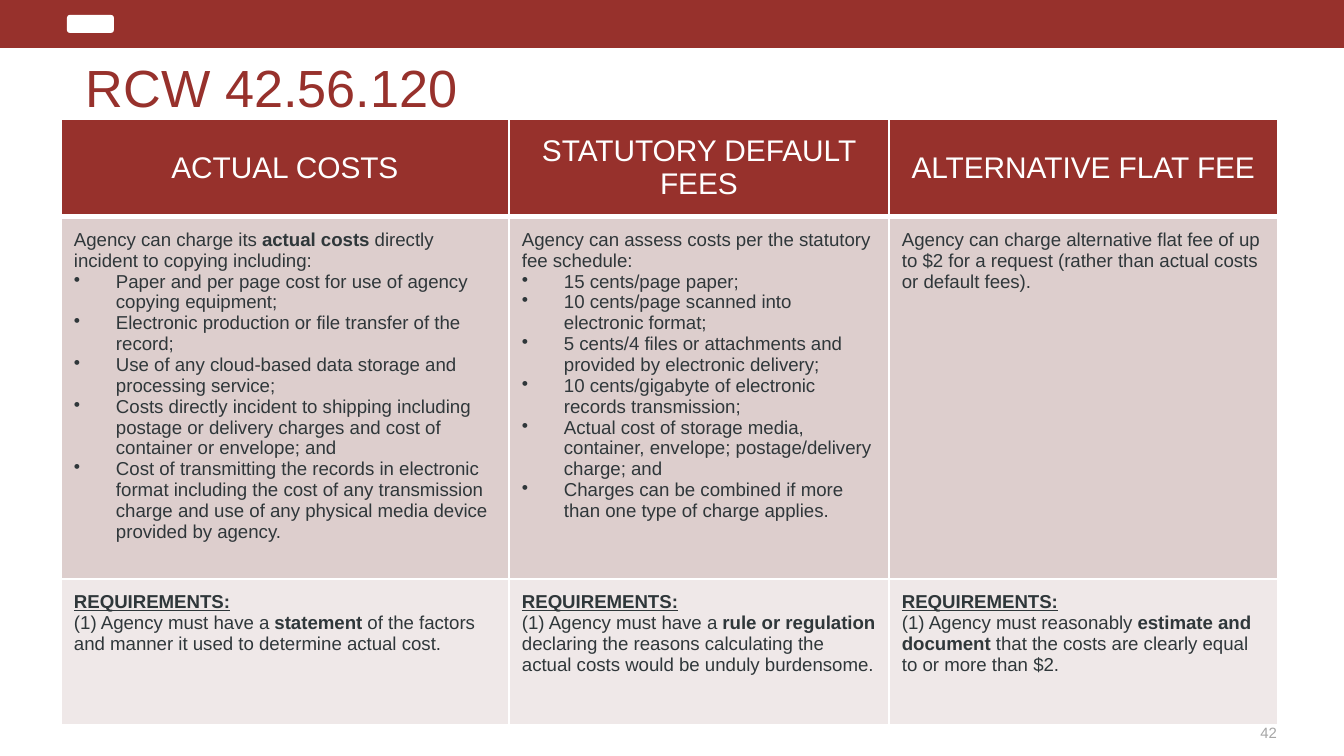
"""Build a slide that compares three ways to charge for public records."""
from lxml.etree import SubElement
from pptx import Presentation
from pptx.dml.color import RGBColor
from pptx.enum.shapes import MSO_SHAPE
from pptx.enum.text import MSO_ANCHOR, PP_ALIGN
from pptx.oxml.ns import qn
from pptx.util import Pt

SCALE = 9144000 / 1344
HUE = {"brand": "97312C", "white": "FFFFFF", "ink": "2F373A", "gray": "A6A6A6",
       "rose": "DDCECD", "pale": "EFE8E8"}
NEED = "REQUIREMENTS:"
HEADS = ["ACTUAL COSTS", "STATUTORY DEFAULT FEES", "ALTERNATIVE FLAT FEE"]
COSTS = [
    ["Agency can charge its *actual costs* directly incident to copying including:",
     "• Paper and per page cost for use of agency copying equipment;",
     "• Electronic production or file transfer of the record;",
     "• Use of any cloud-based data storage and processing service;",
     "• Costs directly incident to shipping including postage or delivery charges "
     "and cost of container or envelope; and",
     "• Cost of transmitting the records in electronic format including the cost of any "
     "transmission charge and use of any physical media device provided by agency."],
    ["Agency can assess costs per the statutory fee schedule:",
     "• 15 cents/page paper;",
     "• 10 cents/page scanned into electronic format;",
     "• 5 cents/4 files or attachments and provided by electronic delivery;",
     "• 10 cents/gigabyte of electronic records transmission;",
     "• Actual cost of storage media, container, envelope; postage/delivery charge; and",
     "• Charges can be combined if more than one type of charge applies."],
    ["Agency can charge alternative flat fee of up to $2 for a request "
     "(rather than actual costs or default fees)."],
]
RULES = [
    "(1) Agency must have a *statement* of the factors and manner it used to "
    "determine actual cost.",
    "(1) Agency must have a *rule or regulation* declaring the reasons calculating "
    "the actual costs would be unduly burdensome.",
    "(1) Agency must reasonably *estimate and document* that the costs are clearly "
    "equal to or more than $2.",
]
BODY = {"size": 10, "hue": "ink", "align": PP_ALIGN.LEFT, "anchor": MSO_ANCHOR.TOP}
ROWS = [
    {"high": 92, "fill": "brand", "cells": [[head] for head in HEADS],
     "look": {"size": 16, "hue": "white", "align": PP_ALIGN.CENTER,
              "anchor": MSO_ANCHOR.MIDDLE}},
    {"high": 340, "fill": "rose", "cells": COSTS, "look": BODY},
    {"high": 146, "fill": "pale", "cells": [[NEED, rule] for rule in RULES], "look": BODY},
]
WIDTHS = [448, 380, 389]
BARS = [
    {"shape": MSO_SHAPE.RECTANGLE, "box": (0, 0, 1344, 48), "hue": "brand"},
    {"shape": MSO_SHAPE.ROUNDED_RECTANGLE, "box": (67, 15, 47, 18), "hue": "white"},
]
LABELS = [
    {"text": "42", "box": (1199, 712, 78, 41), "pad": 7,
     "look": {"size": 8, "hue": "gray", "align": PP_ALIGN.RIGHT,
              "anchor": MSO_ANCHOR.MIDDLE}},
    {"text": "RCW 42.56.120", "box": (86, 23, 1210, 95), "pad": 0,
     "look": {"size": 28, "hue": "brand", "align": PP_ALIGN.LEFT,
              "anchor": MSO_ANCHOR.BOTTOM}},
]


def px(num):
    """Turn pixels into EMU."""
    return round(num * SCALE)


def put(item, **vals):
    """Set each named value on an item."""
    for name, val in vals.items():
        setattr(item, name, val)


def paint(item, hue):
    """Give an item a solid fill."""
    item.fill.solid()
    item.fill.fore_color.rgb = RGBColor.from_string(HUE[hue])


def write(frame, lines, look):
    """Write lines, with bold parts between stars."""
    for num, line in enumerate(lines):
        para = frame.add_paragraph() if num else frame.paragraphs[0]
        para.alignment = look["align"]
        if line.startswith("• "):
            props = para._p.get_or_add_pPr()
            props.set("marL", str(px(42)))
            props.set("indent", str(px(-42)))
            SubElement(props, qn("a:buChar"), char="•")
            line = line[2:]
        for part, text in enumerate(line.split("*")):
            if text:
                run = para.add_run()
                run.text = text
                put(run.font, name="Arial", size=Pt(look["size"]),
                    bold=part % 2 == 1 or line == NEED, underline=line == NEED)
                run.font.color.rgb = RGBColor.from_string(HUE[look["hue"]])


def edge(cell, sides):
    """Draw white cell borders of the given widths."""
    props = cell._tc.get_or_add_tcPr()
    for side, wide in sides.items():
        line = SubElement(props, qn(f"a:ln{side}"), w=str(Pt(wide)))
        fill = SubElement(line, qn("a:solidFill"))
        SubElement(fill, qn("a:srgbClr"), val=HUE["white"])


def main():
    """Build and save the deck."""
    deck = Presentation()
    put(deck, slide_width=px(1344), slide_height=px(756))
    shapes = deck.slides.add_slide(deck.slide_layouts[6]).shapes

    for bar in BARS:
        shape = shapes.add_shape(bar["shape"], *map(px, bar["box"]))
        shape.shadow.inherit = False
        shape.line.fill.background()
        paint(shape, bar["hue"])

    for label in LABELS:
        frame = shapes.add_textbox(*map(px, label["box"])).text_frame
        put(frame, word_wrap=True, vertical_anchor=label["look"]["anchor"],
            margin_left=0, margin_right=0,
            margin_top=px(label["pad"]), margin_bottom=px(label["pad"]))
        write(frame, [label["text"]], label["look"])

    high = sum(row["high"] for row in ROWS)
    table = shapes.add_table(len(ROWS), len(WIDTHS), px(61), px(119),
                             px(sum(WIDTHS)), px(high)).table
    put(table, first_row=False, horz_banding=False)
    for col, wide in zip(table.columns, WIDTHS):
        col.width = px(wide)
    pads = {f"margin_{side}": px(13) for side in ("left", "right", "top", "bottom")}
    for num, row in enumerate(ROWS):
        table.rows[num].height = px(row["high"])
        sides = {"L": 1, "R": 1, "T": 3 if num == 1 else 1, "B": 1 if num else 3}
        for col, lines in enumerate(row["cells"]):
            cell = table.cell(num, col)
            put(cell, vertical_anchor=row["look"]["anchor"], **pads)
            edge(cell, sides)
            paint(cell, row["fill"])
            write(cell.text_frame, lines, row["look"])

    deck.save("out.pptx")


if __name__ == "__main__":
    main()
